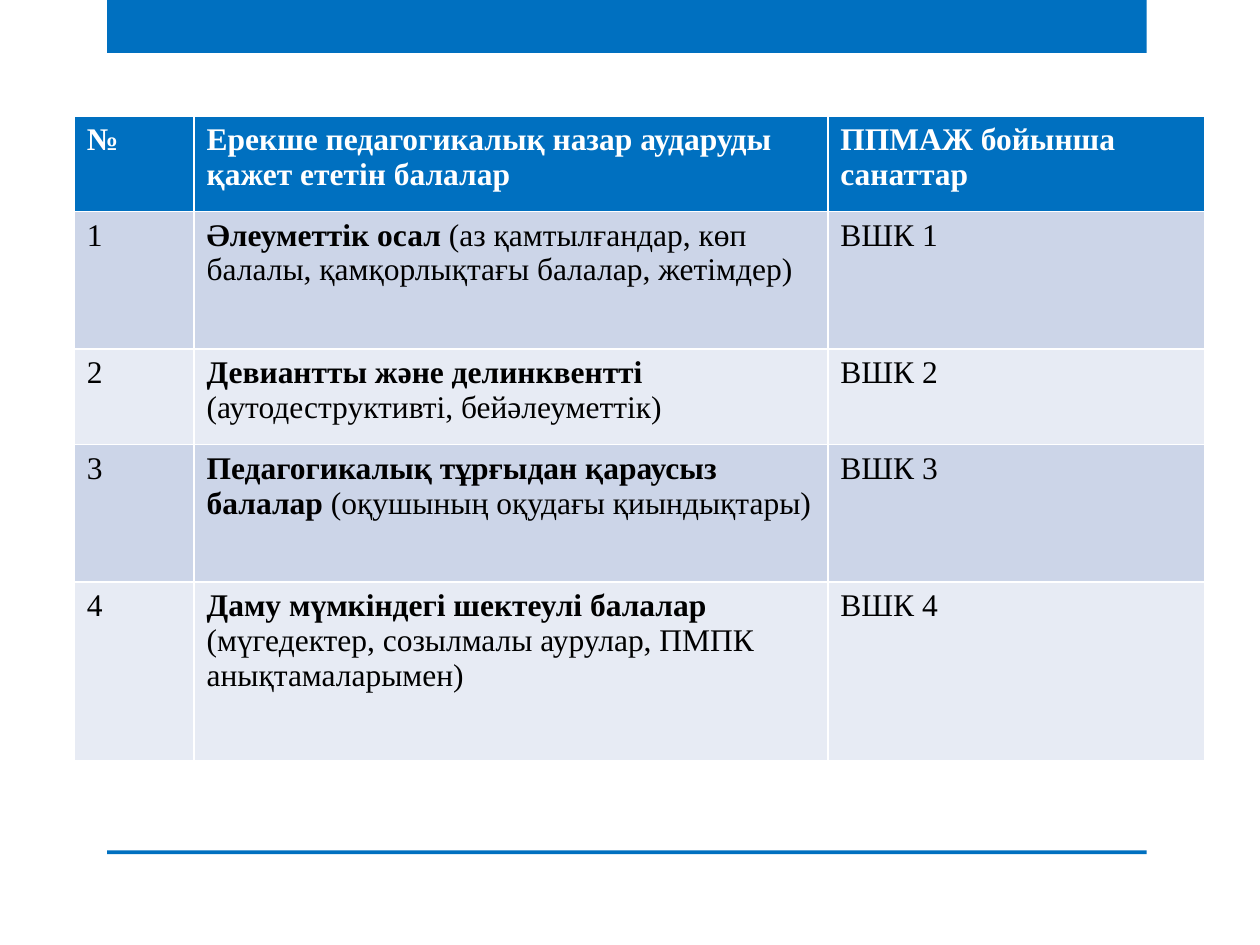
"""Build a slide with a table of pupil groups needing special pedagogical attention."""
from dataclasses import dataclass

from pptx import Presentation
from pptx.dml.color import RGBColor
from pptx.enum.shapes import MSO_SHAPE
from pptx.util import Inches, Pt


@dataclass(frozen=True)
class Theme:
    accent: RGBColor = RGBColor(0x00, 0x70, 0xC0)
    odd_row: RGBColor = RGBColor(0xCC, 0xD5, 0xE8)
    even_row: RGBColor = RGBColor(0xE7, 0xEB, 0xF4)
    heading: RGBColor = RGBColor(0xFF, 0xFF, 0xFF)
    body: RGBColor = RGBColor(0x00, 0x00, 0x00)
    font: str = "Times New Roman"
    size: Pt = Pt(18)


theme = Theme()
headings = ["№", "Ерекше педагогикалық назар аударуды қажет ететін балалар", "ППМАЖ бойынша санаттар"]
groups = [
    ("Әлеуметтік осал", " (аз қамтылғандар, көп балалы, қамқорлықтағы балалар, жетімдер)"),
    ("Девиантты және делинквентті ", "(аутодеструктивті, бейәлеуметтік)"),
    ("Педагогикалық тұрғыдан қараусыз балалар ", "(оқушының оқудағы қиындықтары)"),
    ("Даму мүмкіндегі шектеулі балалар ", "(мүгедектер, созылмалы аурулар, ПМПК анықтамаларымен)"),
]
column_widths = [0.95, 5.03, 2.99]
row_heights = [0.76, 1.09, 0.76, 1.09, 1.42]


def fill_cell(cell, parts, fill, color):
    cell.fill.solid()
    cell.fill.fore_color.rgb = fill
    paragraph = cell.text_frame.paragraphs[0]
    paragraph.font.name = theme.font
    paragraph.font.size = theme.size
    paragraph.font.color.rgb = color
    for text, bold in parts:
        run = paragraph.add_run()
        run.text = text
        run.font.bold = bold


prs = Presentation()
prs.slide_width, prs.slide_height = Inches(10), Inches(7.5)
slide = prs.slides.add_slide(prs.slide_layouts[6])

for top, height in [(0, 0.42), (6.75, 0.03)]:
    band = slide.shapes.add_shape(
        MSO_SHAPE.RECTANGLE, Inches(0.85), Inches(top), Inches(8.25), Inches(height)
    )
    band.shadow.inherit = False
    band.fill.solid()
    band.fill.fore_color.rgb = theme.accent
    band.line.fill.background()

categories = slide.shapes.add_table(
    len(row_heights), len(column_widths), Inches(0.59), Inches(0.92),
    Inches(sum(column_widths)), Inches(sum(row_heights)),
).table
for column, width in zip(categories.columns, column_widths):
    column.width = Inches(width)
for row, height in zip(categories.rows, row_heights):
    row.height = Inches(height)

for column, heading in enumerate(headings):
    fill_cell(categories.cell(0, column), [(heading, True)], theme.accent, theme.heading)

for number, (group, details) in enumerate(groups, start=1):
    row_fill = theme.odd_row if number % 2 else theme.even_row
    row_parts = [
        [(str(number), False)],
        [(group, True), (details, False)],
        [(f"ВШК {number}", False)],
    ]
    for column, parts in enumerate(row_parts):
        fill_cell(categories.cell(number, column), parts, row_fill, theme.body)

prs.save("out.pptx")
